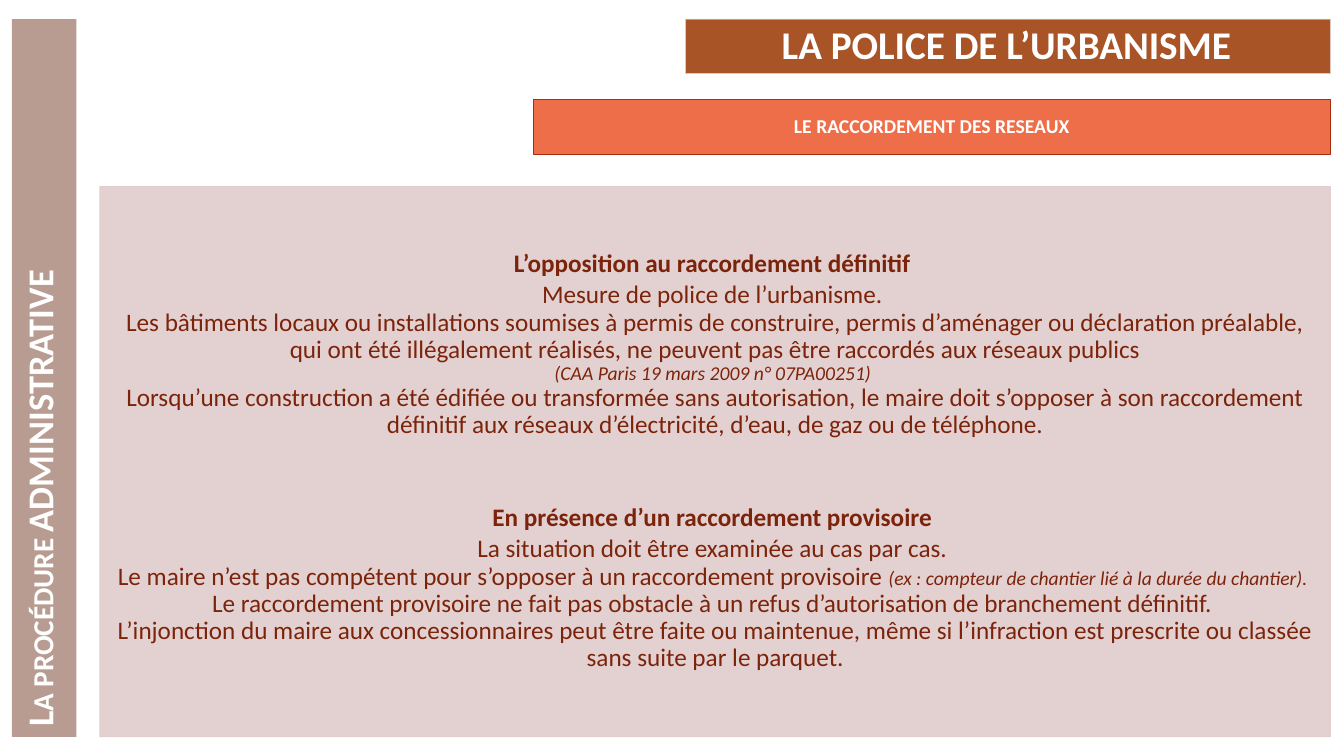
from lxml import etree
from pptx import Presentation
from pptx.dml.color import RGBColor
from pptx.enum.shapes import MSO_SHAPE
from pptx.enum.text import MSO_ANCHOR, MSO_AUTO_SIZE, PP_ALIGN
from pptx.oxml.ns import qn
from pptx.util import Pt

RECTANGLE = MSO_SHAPE.RECTANGLE
TOP, MIDDLE = MSO_ANCHOR.TOP, MSO_ANCHOR.MIDDLE
NO_AUTOFIT = MSO_AUTO_SIZE.NONE
LEFT, CENTER = PP_ALIGN.LEFT, PP_ALIGN.CENTER

WHITE = RGBColor(0xFF, 0xFF, 0xFF)
BROWN = RGBColor(0xA0, 0x42, 0x10)
ORANGE = RGBColor(0xEE, 0x6E, 0x4A)
RED = RGBColor(0xA5, 0x30, 0x0F)
PINK = RGBColor(0xE1, 0xCD, 0xCC)
TAUPE = RGBColor(0xB8, 0x9C, 0x91)
DARK_RED = RGBColor(0x7C, 0x24, 0x0B)

FONT = "Calibri"
BODY_SIZE, NOTE_SIZE = 18, 14
SECTION_GAP = 44.3
RIGHT_EDGE = 950.4

SECTIONS = [
    (
        "L’opposition au raccordement définitif ",
        [
            [("Mesure de police de l’urbanisme. ", False)],
            [("Les bâtiments locaux ou installations soumises à permis de construire, "
              "permis d’aménager ou déclaration préalable, qui ont été illégalement "
              "réalisés, ne peuvent pas être raccordés aux réseaux publics", False)],
            [("(CAA Paris 19 mars 2009 n° 07PA00251) ", True)],
            [("Lorsqu’une construction a été édifiée ou transformée sans autorisation, "
              "le maire doit s’opposer à son raccordement définitif aux réseaux "
              "d’électricité, d’eau, de gaz ou de téléphone.", False)],
        ],
    ),
    (
        "En présence d’un raccordement provisoire ",
        [
            [("La situation doit être examinée au cas par cas. ", False)],
            [("Le maire n’est pas compétent pour s’opposer à un raccordement "
              "provisoire ", False),
             ("(ex : compteur de chantier lié à la durée du chantier). ", True)],
            [("Le raccordement provisoire ne fait pas obstacle à un refus "
              "d’autorisation de branchement définitif. ", False)],
            [("L’injonction du maire aux concessionnaires peut être faite ou maintenue, "
              "même si l’infraction est prescrite ou classée sans suite par le "
              "parquet.", False)],
        ],
    ),
]


def set_alpha(fill_parent, percent):
    color = fill_parent.find(qn("a:solidFill"))[0]
    etree.SubElement(color, qn("a:alpha")).set("val", str(percent * 1000))


def paint(shape, fill, line=None, alpha=None):
    shape.fill.solid()
    shape.fill.fore_color.rgb = fill
    if line is None:
        shape.line.fill.background()
    else:
        shape.line.color.rgb = line
        shape.line.width = Pt(0.5)
    if alpha is not None:
        properties = shape._element.spPr
        set_alpha(properties, alpha)
        set_alpha(properties.find(qn("a:ln")), alpha)


def prepare_frame(shape, anchor):
    frame = shape.text_frame
    frame.word_wrap = True
    frame.auto_size = NO_AUTOFIT
    frame.vertical_anchor = anchor
    return frame


def format_run(run, size, color, bold=False, italic=False):
    font = run.font
    font.name, font.size = FONT, Pt(size)
    font.bold, font.italic = bold, italic
    font.color.rgb = color


def format_paragraph(paragraph, space_after, alignment=CENTER):
    paragraph.alignment = alignment
    paragraph.line_spacing = 0.9
    paragraph.space_before = Pt(0)
    paragraph.space_after = Pt(space_after)


def add_box(slide, box):
    shape = slide.shapes.add_shape(RECTANGLE, *map(Pt, box))
    shape.shadow.inherit = False
    return shape


def place_title(slide, box):
    title = slide.shapes.title
    title.left, title.top, title.width, title.height = map(Pt, box)
    paint(title, BROWN, PINK, 90)
    frame = prepare_frame(title, TOP)
    frame.margin_left = frame.margin_top = Pt(4.3)
    frame.margin_right, frame.margin_bottom = Pt(6.5), Pt(7.2)
    frame.text = "LA POLICE DE L’URBANISME"
    paragraph = frame.paragraphs[0]
    format_paragraph(paragraph, 4.2)
    properties = paragraph._p.get_or_add_pPr()
    properties.set("marL", str(Pt(4.3)))
    properties.set("indent", str(-Pt(4.3)))
    format_run(paragraph.runs[0], 28, WHITE, bold=True)


def add_subtitle(slide, box):
    shape = add_box(slide, box)
    paint(shape, ORANGE, RED)
    frame = prepare_frame(shape, MIDDLE)
    frame.text = "LE RACCORDEMENT DES RESEAUX"
    format_paragraph(frame.paragraphs[0], 4.9)
    format_run(frame.paragraphs[0].runs[0], 14, WHITE, bold=True)


def add_lines(paragraph, lines):
    for index, segments in enumerate(lines):
        for text, is_note in segments:
            run = paragraph.add_run()
            run.text = text
            size = NOTE_SIZE if is_note else BODY_SIZE
            format_run(run, size, DARK_RED, italic=is_note)
        if index < len(lines) - 1:
            paragraph.add_line_break()
            line_break = paragraph._p.findall(qn("a:br"))[-1]
            etree.SubElement(line_break, qn("a:rPr")).set("sz", str(size * 100))


def add_body(slide, box):
    shape = add_box(slide, box)
    paint(shape, PINK, PINK, 90)
    frame = prepare_frame(shape, MIDDLE)
    for index, (heading, lines) in enumerate(SECTIONS):
        paragraph = frame.add_paragraph() if index else frame.paragraphs[0]
        paragraph.text = heading
        format_paragraph(paragraph, 2.7)
        paragraph.space_before = Pt(SECTION_GAP * index)
        format_run(paragraph.runs[0], BODY_SIZE, DARK_RED, bold=True)
        details = frame.add_paragraph()
        format_paragraph(details, 2.7)
        add_lines(details, lines)


def add_sidebar(slide, box):
    shape = add_box(slide, box)
    paint(shape, TAUPE)
    frame = prepare_frame(shape, TOP)
    frame._txBody.bodyPr.set("vert", "vert270")
    frame.text = "La procédure ADMINISTRATIVE"
    frame.paragraphs[0].alignment = LEFT
    run = frame.paragraphs[0].runs[0]
    format_run(run, 26, WHITE, bold=True)
    run._r.get_or_add_rPr().set("cap", "small")


def main():
    presentation = Presentation()
    presentation.slide_width, presentation.slide_height = Pt(960), Pt(540)
    slide = presentation.slides.add_slide(presentation.slide_layouts[5])
    place_title(slide, (489.6, 13.7, RIGHT_EDGE - 489.6, 38.9))
    add_subtitle(slide, (380.9, 71.3, RIGHT_EDGE - 380.9, 38.9))
    add_body(slide, (71.3, 133.2, RIGHT_EDGE - 71.3, 393.1))
    add_sidebar(slide, (8.6, 13.7, 46.1, 512.6))
    presentation.save("out.pptx")


if __name__ == "__main__":
    main()
